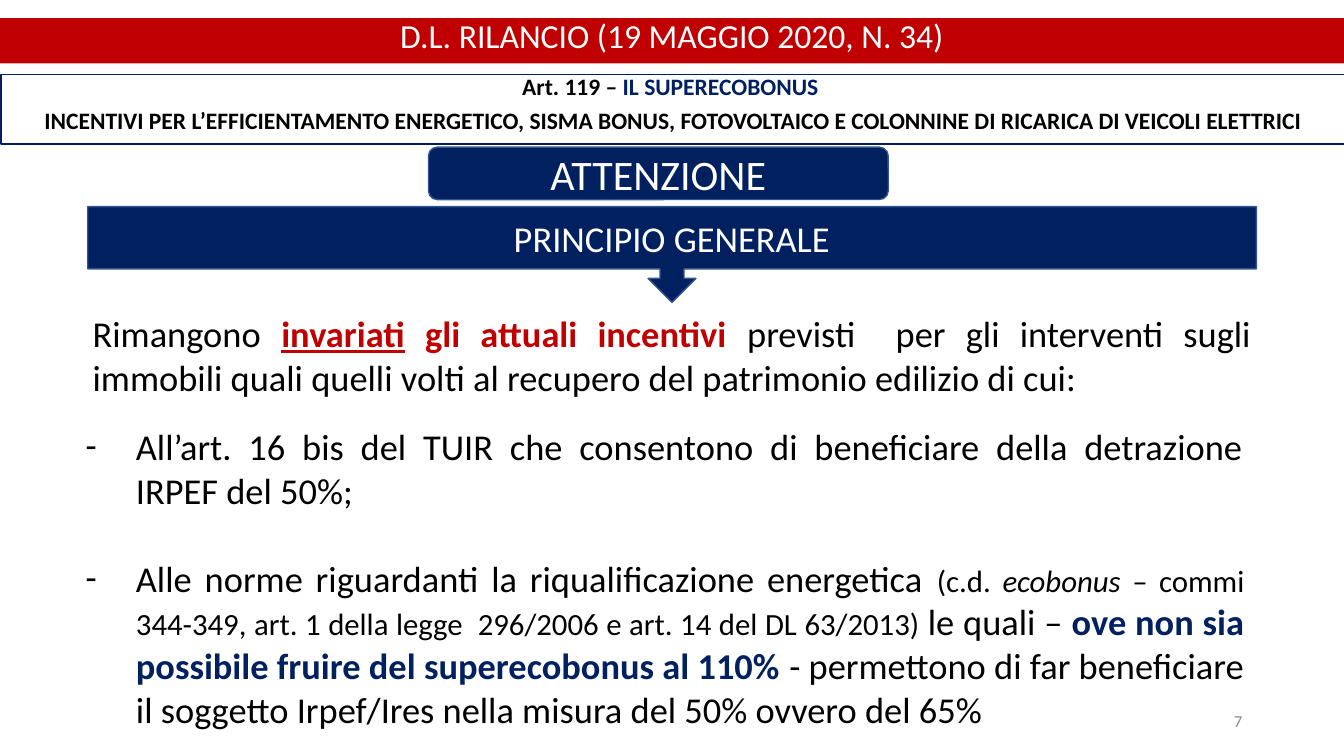
import pptx
import pptx.dml.color
import pptx.enum.shapes
import pptx.enum.text
import pptx.oxml.ns
import pptx.util
from lxml import etree
from pptx.util import Inches

NAVY, RED, WHITE, BLACK = "002060", "C00000", "FFFFFF", "000000"
EDGE, GREY = "325491", "8C8C8C"
SHAPE = pptx.enum.shapes.MSO_SHAPE
ALIGN = pptx.enum.text.PP_ALIGN
ANCHOR = pptx.enum.text.MSO_ANCHOR


def rgb(value):
    return pptx.dml.color.RGBColor.from_string(value)


def add_paragraph(box, spans, size, color=BLACK, align=ALIGN.CENTER, bold=None):
    """Fill the first empty paragraph or a new one; a span is text plus font changes."""
    frame = box.text_frame
    para = frame.paragraphs[0]
    if para.runs:
        para = frame.add_paragraph()
    para.alignment = align
    para.font.name = "Calibri"
    para.font.size = pptx.util.Pt(size)
    para.font.color.rgb = rgb(color)
    para.font.bold = bold
    for text, changes in spans:
        span = para.add_run()
        span.text = text
        for name, value in changes.items():
            if name == "color":
                span.font.color.rgb = rgb(value)
            elif name == "size":
                span.font.size = pptx.util.Pt(value)
            else:
                setattr(span.font, name, value)
    return para


def add_panel(page, kind, place, fill, line=None, anchor=ANCHOR.MIDDLE):
    panel = page.shapes.add_shape(kind, *map(Inches, place))
    panel.shadow.inherit = False
    panel.fill.solid()
    panel.fill.fore_color.rgb = rgb(fill)
    if line:
        panel.line.color.rgb = rgb(line)
        panel.line.width = pptx.util.Pt(1)
    else:
        panel.line.fill.background()
    panel.text_frame.word_wrap = True
    panel.text_frame.vertical_anchor = anchor
    return panel


def add_text_box(page, place, grow=True):
    box = page.shapes.add_textbox(*map(Inches, place))
    box.text_frame.word_wrap = True
    if grow:
        box.text_frame.auto_size = pptx.enum.text.MSO_AUTO_SIZE.SHAPE_TO_FIT_TEXT
    return box


def set_spacing(para, lines):
    para.line_spacing = lines
    para.space_before = pptx.util.Pt(10)


def add_dash(para):
    """Hang the paragraph behind a dash bullet."""
    properties = para._p.get_or_add_pPr()
    properties.set("marL", str(Inches(0.5)))
    properties.set("indent", str(-Inches(0.5)))
    for tag, name, value in (("a:buFont", "typeface", "Calibri"), ("a:buChar", "char", "-")):
        bullet = etree.Element(pptx.oxml.ns.qn(tag))
        bullet.set(name, value)
        properties.find(pptx.oxml.ns.qn("a:defRPr")).addprevious(bullet)


def add_headers(page):
    # Title band
    band = add_panel(page, SHAPE.RECTANGLE, (0, 0.18, 13.33, 0.45), RED, anchor=ANCHOR.TOP)
    title = add_paragraph(band, [("D.L. RILANCIO (19 MAGGIO 2020, N. 34)", {})], 24, WHITE)
    set_spacing(title, 0.8)

    # Article heading
    heading = add_panel(page, SHAPE.RECTANGLE, (0.01, 0.74, 13.33, 0.69), WHITE, NAVY, ANCHOR.TOP)
    for spans in (
        [("Art. 119 – ", {}), ("IL SUPERECOBONUS ", {"color": NAVY})],
        [("INCENTIVI PER L’EFFICIENTAMENTO ENERGETICO, SISMA BONUS, FOTOVOLTAICO "
          "E COLONNINE DI RICARICA DI VEICOLI ELETTRICI", {})],
    ):
        set_spacing(add_paragraph(heading, spans, 16.8, bold=True), 0.7)

    # Warning label and principle callout
    for kind, place, text, size in (
        (SHAPE.ROUNDED_RECTANGLE, (4.25, 1.46, 4.56, 0.52), "ATTENZIONE", 30),
        (SHAPE.DOWN_ARROW_CALLOUT, (0.87, 2.05, 11.59, 0.95), "PRINCIPIO GENERALE", 26),
    ):
        panel = add_panel(page, kind, place, NAVY, EDGE)
        add_paragraph(panel, [(text, {})], size, WHITE)


def add_body(page):
    # Introduction
    intro = add_text_box(page, (0.82, 3.04, 11.69, 0.98))
    add_paragraph(intro, [
        ("Rimangono ", {}),
        ("invariati", {"color": RED, "bold": True, "underline": True}),
        (" gli attuali incentivi ", {"color": RED, "bold": True}),
        ("previsti  per gli interventi sugli immobili quali quelli volti al recupero "
         "del patrimonio edilizio di cui:", {}),
    ], 26, align=ALIGN.JUSTIFY)

    # Dashed list
    rules = add_text_box(page, (0.75, 4.16, 11.69, 3.16))
    items = (
        [("All’art. 16 bis del TUIR che consentono di beneficiare della detrazione "
          "IRPEF del 50%;", {})],
        [("Alle norme riguardanti la riqualificazione energetica ", {}),
         ("(c.d. ", {"size": 22}),
         ("ecobonus", {"size": 22, "italic": True}),
         (" – commi 344-349, art. 1 della legge  296/2006 e art. 14 del DL 63/2013) ",
          {"size": 22}),
         ("le quali – ", {}),
         ("ove non sia possibile fruire del superecobonus al 110% ",
          {"color": NAVY, "bold": True}),
         ("- permettono di far beneficiare il soggetto Irpef/Ires nella misura "
          "del 50% ovvero del 65%", {})],
    )
    for index, spans in enumerate(items):
        para = add_paragraph(rules, spans, 26, align=ALIGN.JUSTIFY)
        para.space_before = pptx.util.Pt(31.7 * index)
        add_dash(para)


def main():
    deck = pptx.Presentation()
    deck.slide_width, deck.slide_height = Inches(13.33), Inches(7.5)
    page = deck.slides.add_slide(deck.slide_layouts[6])
    add_headers(page)
    add_body(page)

    # Page number
    number = add_text_box(page, (9.42, 6.95, 3, 0.4), grow=False)
    number.text_frame.vertical_anchor = ANCHOR.MIDDLE
    add_paragraph(number, [("7", {})], 12, GREY, ALIGN.RIGHT)

    deck.save("out.pptx")


if __name__ == "__main__":
    main()
